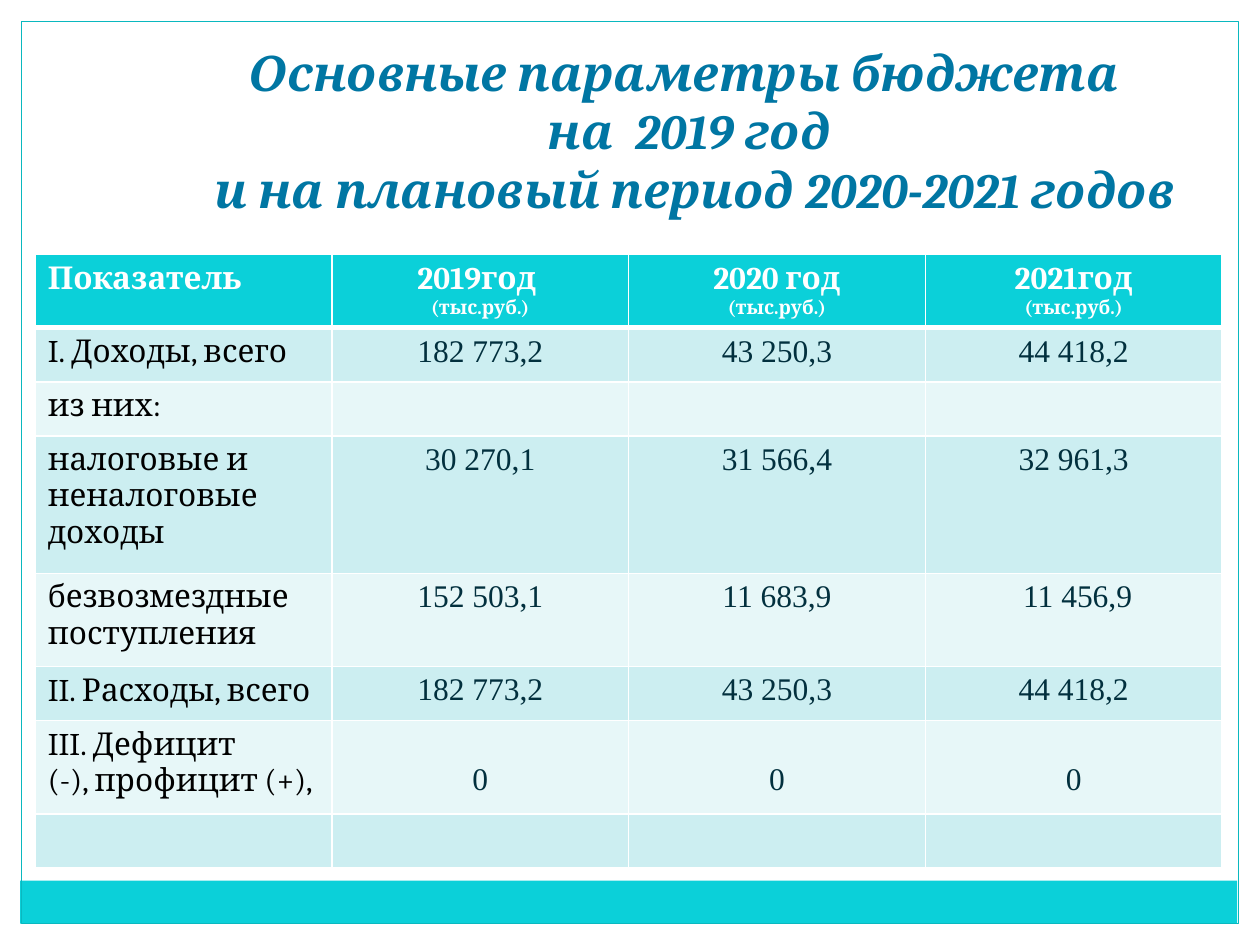
from lxml.etree import SubElement
from pptx import Presentation
from pptx.dml.color import RGBColor
from pptx.enum.shapes import MSO_SHAPE
from pptx.enum.text import MSO_ANCHOR, PP_ALIGN
from pptx.oxml.ns import qn
from pptx.util import Inches, Pt

COLORS = {
    "accent": "0BD0D9", "frame": "0AB8BF", "title": "0076A3",
    "white": "FFFFFF", "label": "000000", "value": "02303E",
    "dark band": "CCEEF1", "light band": "E7F7F8",
}
# Page margins and bottom band: left, top, width, height, colour
BANDS = [
    (0, 0, 10, 0.17, "white"),
    (9.83, 0, 0.17, 7.5, "white"),
    (0, 0, 0.17, 7.5, "white"),
    (0.16, 6.99, 9.66, 0.34, "accent"),
]
TITLE = [
    "Основные параметры бюджета ",
    "на  2019 год",
    " и на плановый период 2020-2021 годов",
]
UNIT = "(тыс.руб.)"
HEADINGS = ["Показатель", f"2019год \n{UNIT}", f"2020 год\n{UNIT}", f"2021год\n{UNIT}"]
# Row height, then label and the three yearly values
ROWS = [
    (0.43, ["I. Доходы, всего", "182 773,2", "43 250,3", "44 418,2"]),
    (0.43, ["из них:", "", "", ""]),
    (1.09, ["налоговые и неналоговые доходы", "30 270,1", "31 566,4", "32 961,3"]),
    (0.74, ["безвозмездные поступления", "152 503,1", "11 683,9", " 11 456,9"]),
    (0.43, ["II. Расходы, всего", "182 773,2", "43 250,3", "44 418,2"]),
    (0.74, ["III. Дефицит\n(-), профицит (+),", "0", "0", "0"]),
    (0.43, ["", "", "", ""]),
]
HEADER_HEIGHT = 0.58
TABLE_WIDTH = 9.42
DEFICIT_ROW = 6


def color(name):
    return RGBColor.from_string(COLORS[name])


def style(paragraph, size, font_name, color_name, bold=False, italic=False, align=PP_ALIGN.CENTER):
    paragraph.alignment = align
    font = paragraph.font
    font.size, font.name, font.bold, font.italic = Pt(size), font_name, bold, italic
    font.color.rgb = color(color_name)


def add_rectangle(slide, left, top, width, height):
    rectangle = slide.shapes.add_shape(
        MSO_SHAPE.RECTANGLE, Inches(left), Inches(top), Inches(width), Inches(height))
    rectangle.shadow.inherit = False
    return rectangle


def set_borders(cell, row):
    widths = {"L": 1, "R": 1, "T": 3 if row == 1 else 1, "B": 3 if row == 0 else 1}
    properties = cell._tc.get_or_add_tcPr()
    for side, width in widths.items():
        line = SubElement(properties, qn(f"a:ln{side}"), w=str(Pt(width)))
        fill = SubElement(line, qn("a:solidFill"))
        SubElement(fill, qn("a:srgbClr"), val=COLORS["white"])


def fill_cell(cell, row, column, text):
    set_borders(cell, row)
    band = "accent" if row == 0 else "dark band" if row % 2 else "light band"
    cell.fill.solid()
    cell.fill.fore_color.rgb = color(band)
    cell.text = text
    align = PP_ALIGN.CENTER if column else PP_ALIGN.LEFT
    for paragraph in cell.text_frame.paragraphs:
        if row == 0:
            size = 11 if paragraph.text == UNIT else 18
            style(paragraph, size, "Cambria", "white", bold=True, align=align)
        elif column == 0:
            style(paragraph, 18, "Cambria", "label", align=align)
        else:
            style(paragraph, 18, "Times New Roman", "value", align=align)
    # Values of the two-line label sit on its second line
    if row == DEFICIT_ROW and column:
        cell.margin_top = Inches(0.33)


def main():
    prs = Presentation()
    prs.slide_width, prs.slide_height = Inches(10), Inches(7.5)
    slide = prs.slides.add_slide(prs.slide_layouts[5])

    # Margins, bottom band and slide frame
    for *box, band_color in BANDS:
        band = add_rectangle(slide, *box)
        band.fill.solid()
        band.fill.fore_color.rgb = color(band_color)
        band.line.fill.background()
    frame = add_rectangle(slide, 0.17, 0.17, 9.66, 7.16)
    frame.fill.background()
    frame.line.color.rgb = color("frame")
    frame.line.width = Pt(0.75)

    # Title, in front of the margins
    title = slide.shapes.title
    frame._element.addnext(title._element)
    title.left, title.top = Inches(0.94), Inches(0.28)
    title.width, title.height = Inches(9.06), Inches(1.51)
    title.text_frame.text = "\n".join(TITLE)
    title.text_frame.vertical_anchor = MSO_ANCHOR.MIDDLE
    for paragraph in title.text_frame.paragraphs:
        style(paragraph, 28, "Cambria", "title", bold=True, italic=True)
        paragraph.space_before = Pt(0)

    # Budget table
    grid = [(HEADER_HEIGHT, HEADINGS)] + ROWS
    budget = slide.shapes.add_table(
        len(grid), len(HEADINGS), Inches(0.28), Inches(2.02),
        Inches(TABLE_WIDTH), Inches(sum(height for height, _ in grid))).table
    for column in budget.columns:
        column.width = Inches(TABLE_WIDTH / len(HEADINGS))
    for row, (height, texts) in enumerate(grid):
        budget.rows[row].height = Inches(height)
        for column, text in enumerate(texts):
            fill_cell(budget.cell(row, column), row, column, text)

    prs.save("out.pptx")


if __name__ == "__main__":
    main()
